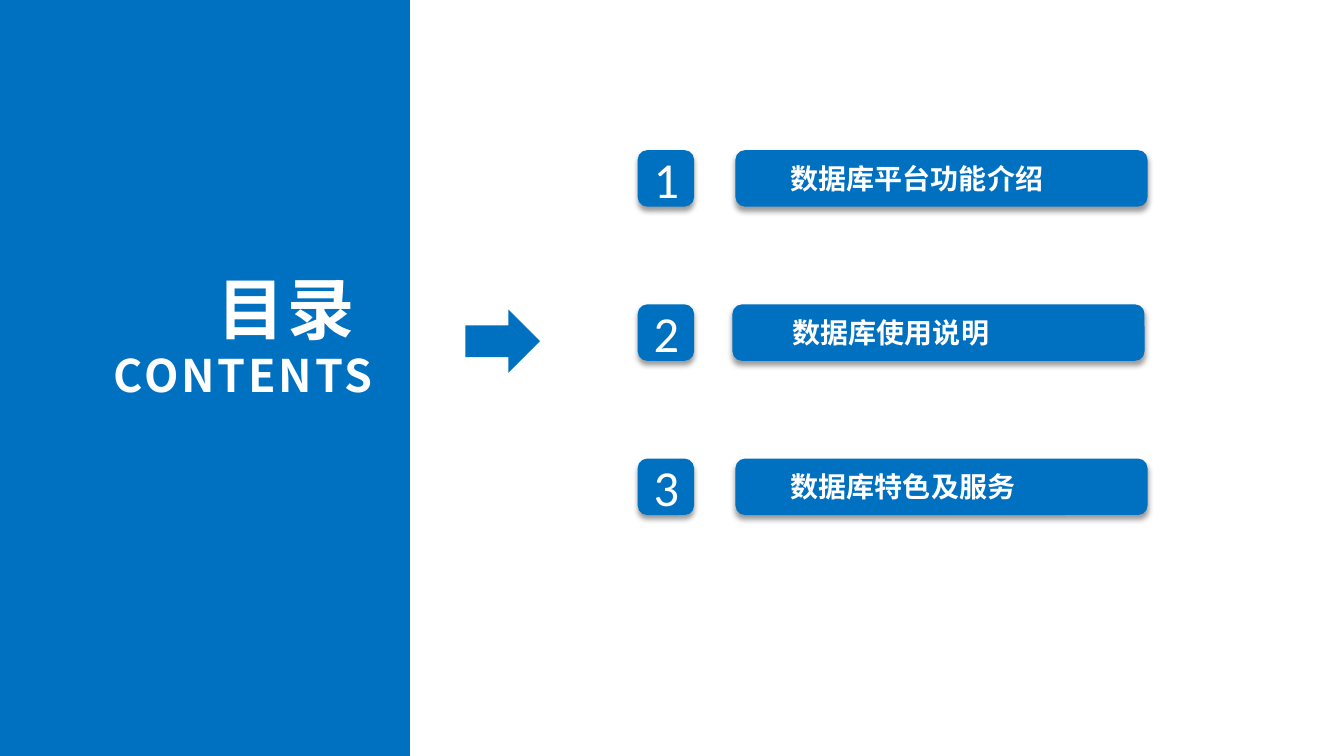
from lxml import etree
from pptx import Presentation
from pptx.dml.color import RGBColor
from pptx.enum.shapes import MSO_SHAPE
from pptx.enum.text import MSO_ANCHOR, MSO_AUTO_SIZE, PP_ALIGN
from pptx.oxml import parse_xml
from pptx.oxml.ns import nsdecls, qn
from pptx.util import Inches, Pt

TITLE_LINES = [("目录 ", 48), ("CONTENTS", 32)]
ITEMS = [
    ("数据库平台功能介绍", 7.3, 7.72, 2.9),
    ("数据库使用说明", 7.27, 7.74, 2.9),
    ("数据库特色及服务", 7.3, 7.72, 3.28),
]
ROW_TOP, ROW_STEP, ROW_HEIGHT = 1.49, 1.53, 0.56
NUMBER_LEFT, BAR_WIDTH = 6.33, 4.09
BLUE = RGBColor(0x00, 0x70, 0xC0)
WHITE = RGBColor(0xFF, 0xFF, 0xFF)
LATIN_FONT, CJK_FONT = "Calibri", "Noto Sans CJK SC"
RECT, ROUNDED, ARROW = MSO_SHAPE.RECTANGLE, MSO_SHAPE.ROUNDED_RECTANGLE, MSO_SHAPE.RIGHT_ARROW
TOP, MIDDLE = MSO_ANCHOR.TOP, MSO_ANCHOR.MIDDLE
LEFT, CENTER, RIGHT = PP_ALIGN.LEFT, PP_ALIGN.CENTER, PP_ALIGN.RIGHT
NO_AUTOSIZE = MSO_AUTO_SIZE.NONE
SHADOW_XML = (
    f'<a:effectLst {nsdecls("a")}><a:outerShdw blurRad="{Pt(4)}" dist="{Pt(3)}" '
    'dir="5400000" rotWithShape="0"><a:srgbClr val="000000"><a:alpha val="40000"/>'
    '</a:srgbClr></a:outerShdw></a:effectLst>'
)


def add_block(s, kind, left, top, width, height, shadow=False):
    """Add a blue shape without outline."""
    sp = s.shapes.add_shape(kind, Inches(left), Inches(top), Inches(width), Inches(height))
    sp.fill.solid()
    sp.fill.fore_color.rgb = BLUE
    sp.line.fill.background()
    sp.shadow.inherit = False
    if shadow:
        old = sp._element.spPr.find(qn("a:effectLst"))
        old.getparent().replace(old, parse_xml(SHADOW_XML))
    return sp


def set_text(sp, lines, font, align, anchor, bold=False, spacing=0):
    """Write one white paragraph per (text, size) pair."""
    tf = sp.text_frame
    tf.word_wrap = True
    tf.auto_size = NO_AUTOSIZE
    tf.vertical_anchor = anchor
    tf.margin_left = tf.margin_right = Inches(0.13)
    tf.margin_top = tf.margin_bottom = Inches(0.07)
    for i, (text, size) in enumerate(lines):
        p = tf.add_paragraph() if i else tf.paragraphs[0]
        p.alignment = align
        r = p.add_run()
        r.text = text
        r.font.name = font
        r.font.size = Pt(size)
        r.font.bold = bold
        r.font.color.rgb = WHITE
        rPr = r.font._element
        etree.SubElement(rPr, qn("a:ea")).set("typeface", font)
        if spacing:
            rPr.set("spc", str(spacing * 100))


def main():
    """Build the contents slide."""
    prs = Presentation()
    prs.slide_width, prs.slide_height = Inches(13.34), Inches(7.5)
    s = prs.slides.add_slide(prs.slide_layouts[5])
    title = s.shapes.title

    panel = add_block(s, RECT, 0, 0, 4.07, 7.5)
    title._element.addprevious(panel._element)
    title.left, title.top = Inches(0.76), Inches(2.58)
    title.width, title.height = Inches(3.07), Inches(1.48)
    set_text(title, TITLE_LINES, CJK_FONT, RIGHT, TOP, bold=True, spacing=2)

    add_block(s, ARROW, 4.62, 3.07, 0.74, 0.63)

    for i, (label, bar_left, label_left, label_width) in enumerate(ITEMS):
        top = ROW_TOP + i * ROW_STEP
        number = add_block(s, ROUNDED, NUMBER_LEFT, top, ROW_HEIGHT, ROW_HEIGHT, shadow=True)
        set_text(number, [(str(i + 1), 36)], LATIN_FONT, CENTER, MIDDLE)
        add_block(s, ROUNDED, bar_left, top, BAR_WIDTH, ROW_HEIGHT, shadow=True)
        box = s.shapes.add_textbox(
            Inches(label_left), Inches(top + 0.04), Inches(label_width), Inches(0.47))
        set_text(box, [(label, 20)], CJK_FONT, LEFT, TOP, bold=True)

    prs.save("out.pptx")


if __name__ == "__main__":
    main()
